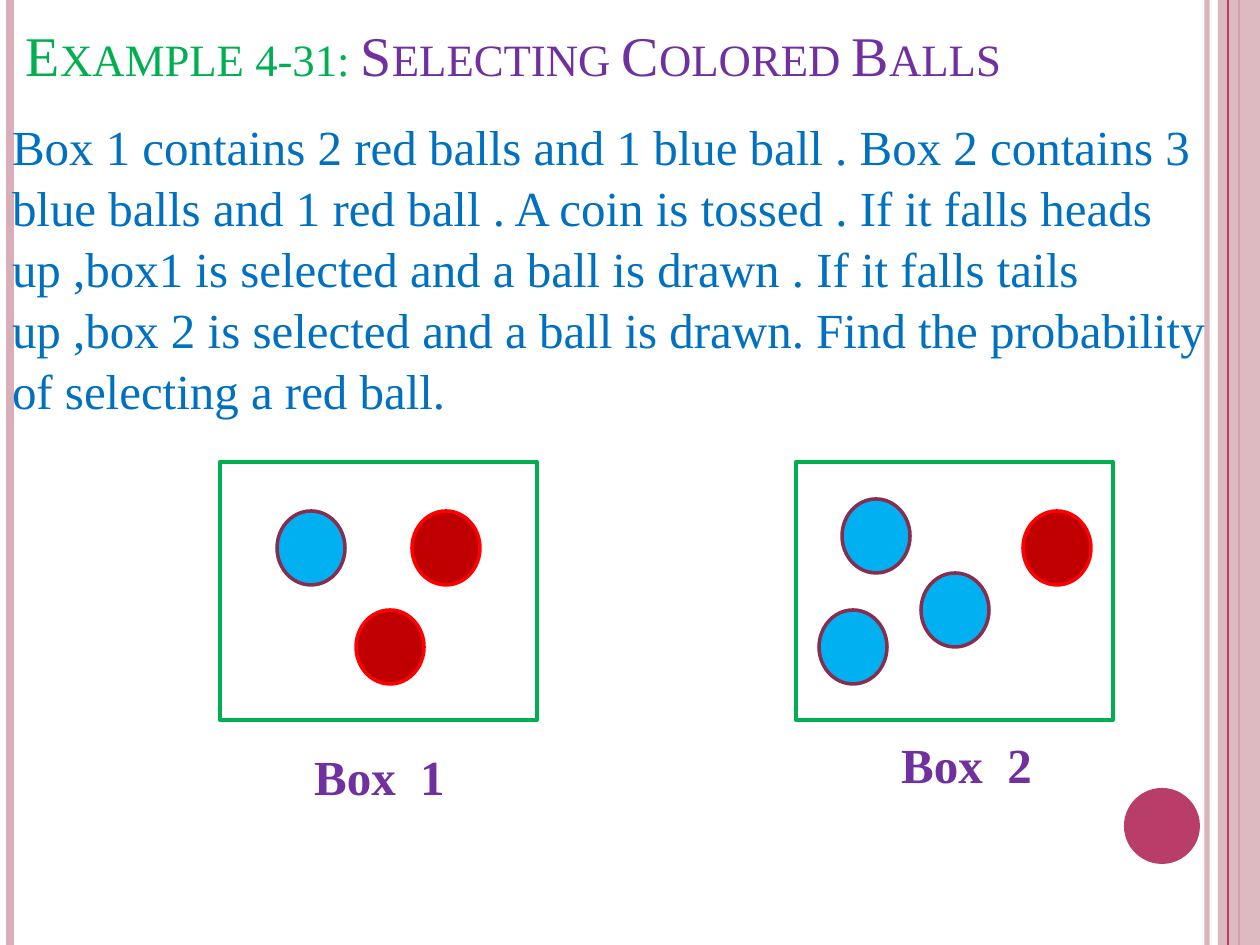
import dataclasses

import pptx
import pptx.dml.color
import pptx.enum.shapes
import pptx.enum.text
import pptx.oxml
import pptx.oxml.ns
import pptx.util

SHAPES = pptx.enum.shapes.MSO_SHAPE
ALIGN = pptx.enum.text.PP_ALIGN
ANCHOR = pptx.enum.text.MSO_ANCHOR


@dataclasses.dataclass(frozen=True)
class Theme:
    font: str = "Times New Roman"
    title_size: int = 32
    body_size: int = 28
    white: str = "FFFFFF"
    pale: str = "D8AFB9"
    accent: str = "B83D68"
    green: str = "00B050"
    purple: str = "7030A0"
    blue: str = "0070C0"
    blue_ball: tuple = ("00B0F0", "882D4D")
    red_ball: tuple = ("C00000", "FF0000")


class SlideBuilder:
    """Draws themed elements on one slide, with lengths in px."""

    def __init__(self, presentation, theme):
        self.theme = theme
        self.slide = presentation.slides.add_slide(presentation.slide_layouts[6])

    @staticmethod
    def px(length):
        return pptx.util.Emu(round(length * 914400 / 126))

    @staticmethod
    def paint(fill, color, alpha=100):
        fill.solid()
        fill.fore_color.rgb = pptx.dml.color.RGBColor.from_string(color)
        if alpha < 100:
            tag = pptx.oxml.ns.qn("a:srgbClr")
            node = next(fill._xPr.iter(tag))
            node.append(pptx.oxml.parse_xml(
                f'<a:alpha {pptx.oxml.ns.nsdecls("a")} val="{alpha * 1000}"/>'))

    def style(self, font, size, color, bold=False):
        font.name = self.theme.font
        font.size = pptx.util.Pt(size)
        font.bold = bold
        font.color.rgb = pptx.dml.color.RGBColor.from_string(color)

    def rule(self, x, color, width, alpha=100):
        connector = self.slide.shapes.add_connector(
            pptx.enum.shapes.MSO_CONNECTOR.STRAIGHT,
            self.px(x), 0, self.px(x), self.px(945))
        self.paint(connector.line.fill, color, alpha)
        connector.line.width = pptx.util.Pt(width)
        connector._element.spPr.append(pptx.oxml.parse_xml(
            f'<a:effectLst {pptx.oxml.ns.nsdecls("a")}/>'))

    def shape(self, kind, box, fill, line=None, width=0, alpha=100):
        shape = self.slide.shapes.add_shape(kind, *map(self.px, box))
        shape.shadow.inherit = False
        self.paint(shape.fill, fill, alpha)
        if line:
            self.paint(shape.line.fill, line)
            shape.line.width = pptx.util.Pt(width)
        else:
            shape.line.fill.background()
        return shape

    def ball(self, x, y, colors):
        self.shape(SHAPES.FLOWCHART_CONNECTOR, (x, y, 68, 74), *colors, 2)

    def label(self, text, x, y):
        shape = self.shape(SHAPES.RECTANGLE, (x, y, 237, 86), self.theme.white)
        shape.text_frame.vertical_anchor = ANCHOR.MIDDLE
        paragraph = shape.text_frame.paragraphs[0]
        paragraph.text = text
        paragraph.alignment = ALIGN.CENTER
        self.style(paragraph.font, self.theme.body_size, self.theme.purple, True)

    def text_box(self, box, left, top, right):
        frame = self.slide.shapes.add_textbox(*map(self.px, box)).text_frame
        frame.word_wrap = True
        frame.margin_left = self.px(left)
        frame.margin_top = self.px(top)
        frame.margin_right = self.px(right)
        return frame

    def title(self, parts):
        frame = self.text_box((0, 0, 1134, 94), 26, 6, 12)
        frame.vertical_anchor = ANCHOR.BOTTOM
        for text, color in parts:
            run = frame.paragraphs[0].add_run()
            run.text = text
            self.style(run.font, self.theme.title_size, color)
            run.font._element.set("cap", "small")

    def body(self, text):
        paragraph = self.text_box((0, 105, 1218, 325), 12, 9, 10).paragraphs[0]
        paragraph.text = text
        paragraph.line_spacing = 1.04
        self.style(paragraph.font, self.theme.body_size, self.theme.blue)


def main():
    theme = Theme()
    presentation = pptx.Presentation()
    presentation.slide_width = SlideBuilder.px(1260)
    presentation.slide_height = SlideBuilder.px(945)
    builder = SlideBuilder(presentation, theme)

    builder.rule(1207, theme.pale, 3, 93)
    builder.rule(10, theme.pale, 4.5)
    builder.rule(1239, theme.accent, 1.5)
    builder.shape(SHAPES.RECTANGLE, (1218, 0, 42, 945), theme.pale, alpha=87)
    builder.rule(1228, theme.accent, 0.75)
    builder.shape(SHAPES.OVAL, (1124, 788, 76, 76), theme.accent)

    builder.title([("Example 4-31: ", theme.green),
                   ("Selecting Colored Balls", theme.purple)])
    builder.body(
        "Box 1 contains 2 red balls and 1 blue ball . Box 2 contains 3 blue "
        "balls and 1 red ball . A coin is tossed . If it falls heads up ,box1 "
        "is selected and a ball is drawn . If it falls tails up ,box 2 is "
        "selected and a ball is drawn. Find the probability of selecting a "
        "red ball.")

    builder.label("Box  2", 848, 721)
    builder.label("Box  1", 261, 733)
    for x in (220, 796):
        builder.shape(SHAPES.RECTANGLE, (x, 462, 317, 258),
                      theme.white, theme.green, 2.5)
    for x, y in ((277, 511), (921, 573), (819, 610), (842, 499)):
        builder.ball(x, y, theme.blue_ball)
    for x, y in ((412, 511), (356, 610), (1023, 511)):
        builder.ball(x, y, theme.red_ball)
    presentation.save("out.pptx")


if __name__ == "__main__":
    main()
